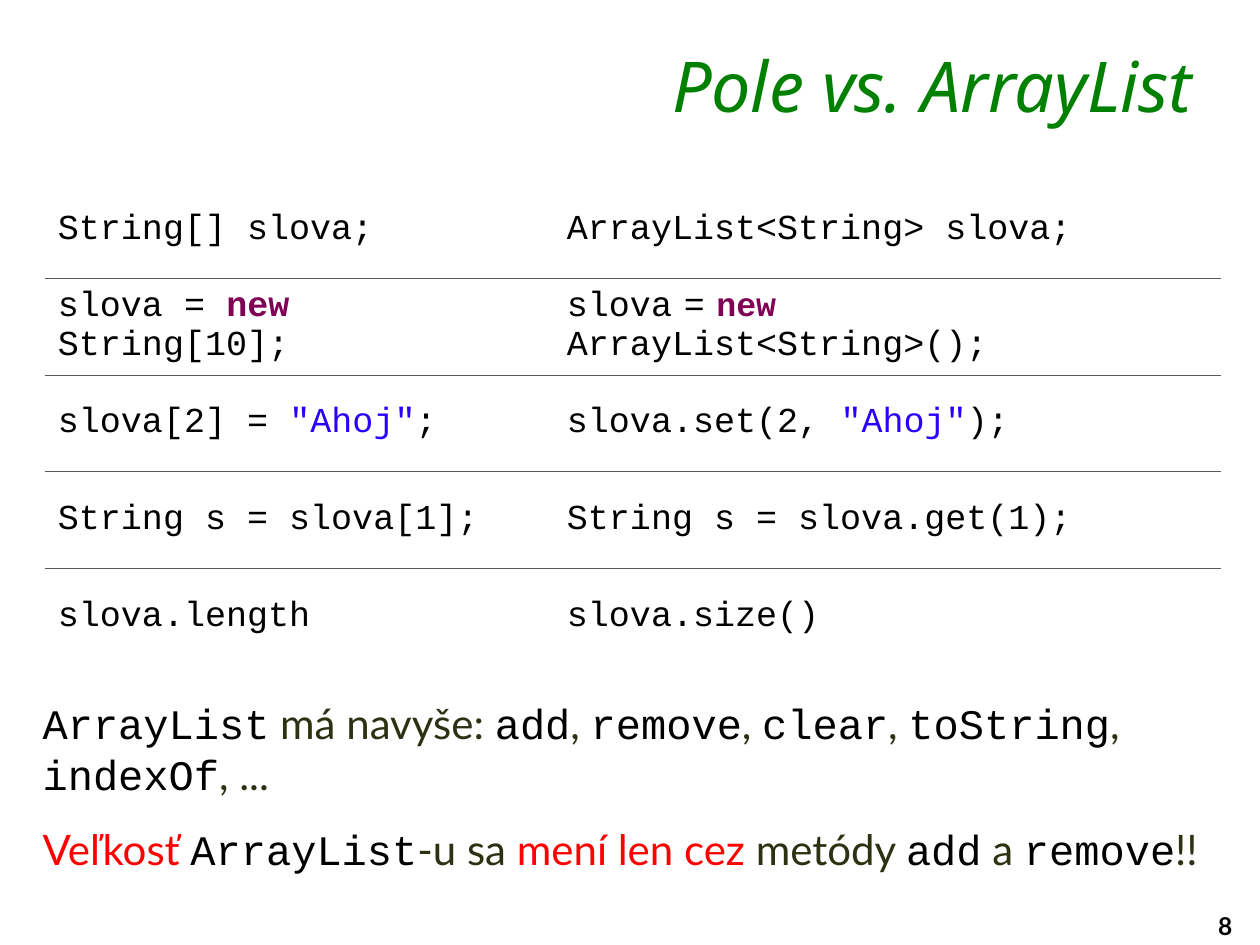
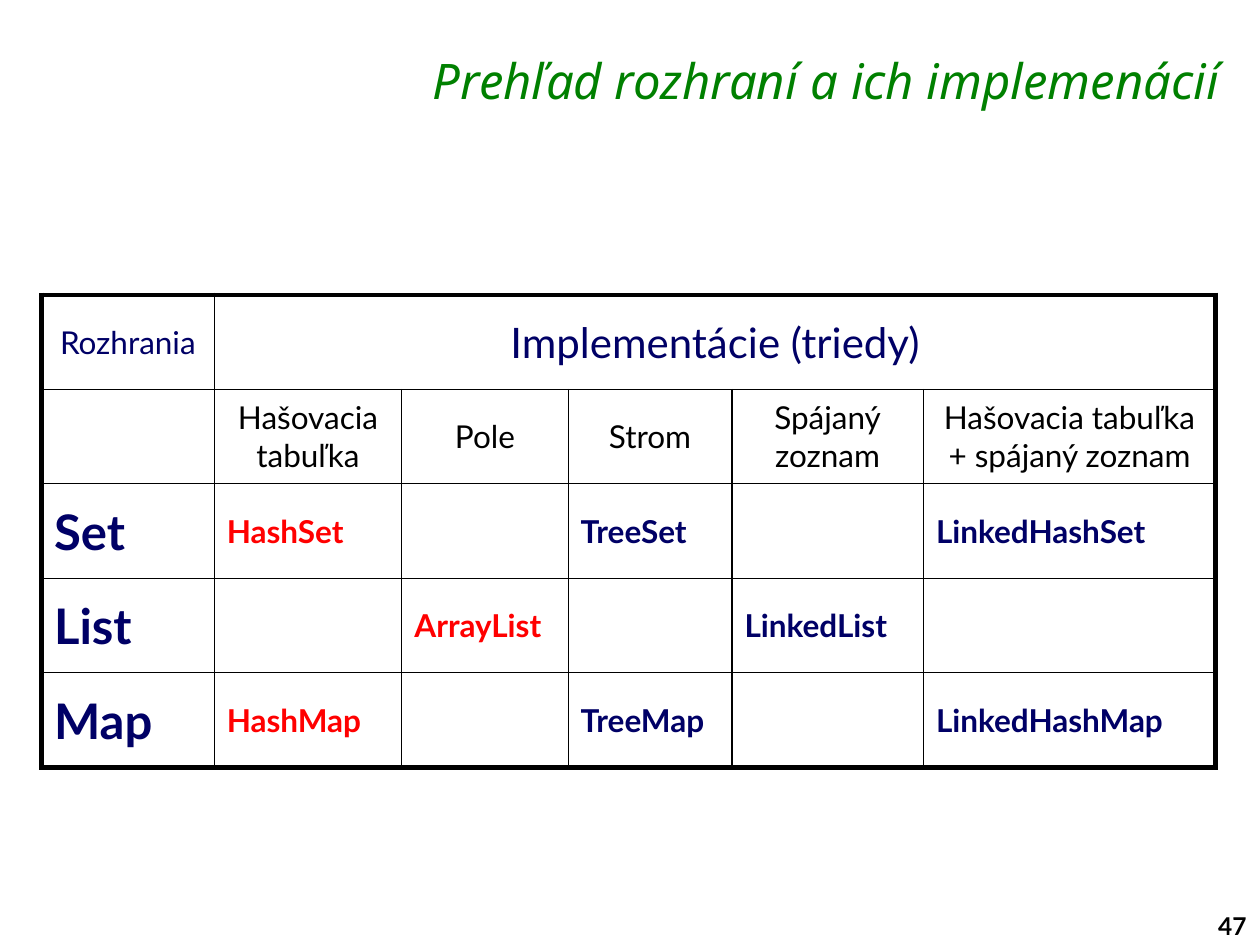
from dataclasses import dataclass, replace

from lxml.etree import SubElement
from pptx import Presentation
from pptx.dml.color import RGBColor
from pptx.enum.text import MSO_ANCHOR, MSO_AUTO_SIZE, PP_ALIGN
from pptx.oxml.ns import qn
from pptx.util import Inches, Pt

BLACK = RGBColor(0x00, 0x00, 0x00)
GREEN = RGBColor(0x00, 0x80, 0x00)
NAVY = RGBColor(0x00, 0x00, 0x66)
RED = RGBColor(0xFF, 0x00, 0x00)
OLIVE = RGBColor(0x2B, 0x32, 0x12)
KEYWORD_PURPLE = RGBColor(0x7F, 0x00, 0x55)
STRING_BLUE = RGBColor(0x2A, 0x00, 0xFF)
RULE_GREY = RGBColor(0x59, 0x59, 0x59)

SLIDE_WIDTH, SLIDE_HEIGHT = Inches(10), Inches(7.5)
COLUMN, ROW = SLIDE_WIDTH / 100, SLIDE_HEIGHT / 75  # layout grid
TITLE_ONLY_LAYOUT = 5


@dataclass(frozen=True)
class Style:
    font: str
    size: float
    color: RGBColor = BLACK
    bold: bool = False
    italic: bool = False


TITLE = Style("Noto Sans", 40, GREEN, italic=True)
NUMBER = Style("Lato", 14, bold=True)
CODE = Style("Courier New", 20)
KEYWORD = replace(CODE, color=KEYWORD_PURPLE, bold=True)
STRING = replace(CODE, color=STRING_BLUE)
THIN_SPACE = replace(CODE, size=11)
NOTE = Style("Lato", 24, OLIVE)
WARNING = replace(NOTE, color=RED)
NOTE_CODE = replace(CODE, size=24)
KIND = Style("Lato", 18)
CORNER = replace(KIND, color=NAVY)
GROUP = replace(CORNER, size=24)
INTERFACE = replace(CORNER, size=28, bold=True)
CLASS = replace(CORNER, bold=True)
COMMON_CLASS = replace(CLASS, color=RED)

CODE_PAIRS = [
    ([("String[] slova;", CODE)], [("ArrayList<String> slova;", CODE)]),
    (
        [("slova = ", CODE), ("new ", KEYWORD), ("String[10];", CODE)],
        [
            ("slova", CODE), (" ", THIN_SPACE), ("=", CODE), (" ", THIN_SPACE),
            ("new", replace(KEYWORD, size=19)), (" ", THIN_SPACE),
            ("ArrayList<String>();", CODE),
        ],
    ),
    (
        [("slova[2] = ", CODE), ('"Ahoj"', STRING), (";", CODE)],
        [("slova.set(2, ", CODE), ('"Ahoj"', STRING), (");", CODE)],
    ),
    ([("String s = slova[1];", CODE)], [("String s = slova.get(1);", CODE)]),
    ([("slova.length", CODE)], [("slova.size()", CODE)]),
]

EXTRA_METHODS = [
    ("ArrayList", NOTE_CODE), (" má navyše: ", NOTE),
    ("add", NOTE_CODE), (", ", NOTE), ("remove", NOTE_CODE), (", ", NOTE),
    ("clear", NOTE_CODE), (", ", NOTE), ("toString", NOTE_CODE), (", ", NOTE),
    ("indexOf", NOTE_CODE), (", ...", NOTE),
]
SIZE_WARNING = [
    ("Veľkosť ", WARNING), ("ArrayList", NOTE_CODE), ("-u sa ", NOTE),
    ("mení len cez ", WARNING), ("metódy ", NOTE), ("add", NOTE_CODE),
    (" a ", NOTE), ("remove", NOTE_CODE), ("!!", NOTE),
]

KINDS = [
    ["Hašovacia", "tabuľka"], ["Pole"], ["Strom"], ["Spájaný", "zoznam"],
    ["Hašovacia tabuľka", "+ spájaný zoznam"],
]
INTERFACES = {
    "Set": ["HashSet", "", "TreeSet", "", "LinkedHashSet"],
    "List": ["", "ArrayList", "", "LinkedList", ""],
    "Map": ["HashMap", "", "TreeMap", "", "LinkedHashMap"],
}
COMMON_CLASSES = {"HashSet", "ArrayList", "HashMap"}


def grid_box(left, top, width, height):
    """Turn grid columns and rows into slide lengths."""
    return (round(left * COLUMN), round(top * ROW),
            round(width * COLUMN), round(height * ROW))


def write(text_frame, lines, align=PP_ALIGN.LEFT, gap=0):
    """Write each line, a list of (text, style) runs, as a paragraph."""
    for index, runs in enumerate(lines):
        paragraph = text_frame.add_paragraph() if index else text_frame.paragraphs[0]
        paragraph.alignment = align
        if index and gap:
            paragraph.space_before = Pt(gap)
        for text, style in runs:
            run = paragraph.add_run()
            run.text = text
            font = run.font
            font.name, font.size = style.font, Pt(style.size)
            font.bold, font.italic = style.bold, style.italic
            font.color.rgb = style.color


def add_text(slide, box, lines, wrap=True, gap=0):
    text_frame = slide.shapes.add_textbox(*grid_box(*box)).text_frame
    text_frame.word_wrap = wrap
    write(text_frame, lines, gap=gap)


def add_titled_slide(presentation, title, title_size, title_box, number):
    slide = presentation.slides.add_slide(presentation.slide_layouts[TITLE_ONLY_LAYOUT])
    shape = slide.shapes.title
    shape.left, shape.top, shape.width, shape.height = grid_box(*title_box)
    text_frame = shape.text_frame
    text_frame.auto_size = MSO_AUTO_SIZE.NONE
    text_frame.vertical_anchor = MSO_ANCHOR.TOP
    text_frame.margin_top = text_frame.margin_bottom = Inches(0.03)
    write(text_frame, [[(title, replace(TITLE, size=title_size))]], PP_ALIGN.RIGHT)
    add_text(slide, (95.7, 71.8, 4.3, 3.3), [[(number, NUMBER)]], wrap=False)
    return slide


def set_borders(cell, widths, color):
    """Draw left, right, top and bottom borders; a width of 0 hides one."""
    properties = cell._tc.get_or_add_tcPr()
    for index, (side, width) in enumerate(zip("LRTB", widths)):
        line = SubElement(properties, qn(f"a:ln{side}"), w=str(Pt(width)))
        if width:
            fill = SubElement(line, qn("a:solidFill"))
            SubElement(fill, qn("a:srgbClr"), val=str(color))
        else:
            SubElement(line, qn("a:noFill"))
        properties.insert(index, line)


def add_plain_table(slide, box, column_widths, row_count, outer, inner, color):
    """Add an unfilled table; outer and inner are (vertical, horizontal) widths."""
    column_count = len(column_widths)
    table = slide.shapes.add_table(row_count, column_count, *grid_box(*box)).table
    table.first_row = table.horz_banding = False
    for column, width in zip(table.columns, column_widths):
        column.width = round(width * COLUMN)
    for r in range(row_count):
        for c in range(column_count):
            cell = table.cell(r, c)
            cell.fill.background()
            cell.vertical_anchor = MSO_ANCHOR.MIDDLE
            set_borders(cell, (
                inner[0] if c else outer[0],
                inner[0] if c < column_count - 1 else outer[0],
                inner[1] if r else outer[1],
                inner[1] if r < row_count - 1 else outer[1],
            ), color)
    return table


def add_code_comparison(slide, box):
    table = add_plain_table(slide, box, (40.4, 52.9), len(CODE_PAIRS),
                            (0, 0), (0, 0.25), RULE_GREY)
    for r, pair in enumerate(CODE_PAIRS):
        for c, runs in enumerate(pair):
            write(table.cell(r, c).text_frame, [runs])


def add_interface_overview(slide, box):
    table = add_plain_table(slide, box, (13.7, 14.9, 13.2, 13, 15.2, 23.2),
                            len(INTERFACES) + 2, (3, 3), (0.75, 0.75), BLACK)
    group = table.cell(0, 1)
    group.merge(table.cell(0, len(KINDS)))
    set_borders(group, (0.75, 3, 3, 0.75), BLACK)
    properties = group._tc.tcPr
    for replaced in properties.findall(qn("a:lnL"))[1:] + properties.findall(qn("a:lnR"))[1:] \
            + properties.findall(qn("a:lnT"))[1:] + properties.findall(qn("a:lnB"))[1:]:
        properties.remove(replaced)
    write(table.cell(0, 0).text_frame, [[("Rozhrania", CORNER)]], PP_ALIGN.CENTER)
    write(group.text_frame, [[("Implementácie (triedy)", GROUP)]], PP_ALIGN.CENTER)
    for c, lines in enumerate(KINDS, 1):
        write(table.cell(1, c).text_frame, [[(line, KIND)] for line in lines],
              PP_ALIGN.CENTER)
    for r, (interface, classes) in enumerate(INTERFACES.items(), 2):
        write(table.cell(r, 0).text_frame, [[(interface, INTERFACE)]])
        for c, name in enumerate(classes, 1):
            if name:
                style = COMMON_CLASS if name in COMMON_CLASSES else CLASS
                write(table.cell(r, c).text_frame, [[(name, style)]])


def main():
    presentation = Presentation()
    presentation.slide_width, presentation.slide_height = SLIDE_WIDTH, SLIDE_HEIGHT

    slide = add_titled_slide(presentation, "Pole vs. ArrayList", 40,
                             (20.1, 3.1, 75.5, 5.8), "8")
    add_code_comparison(slide, (3.6, 14.4, 93.3, 38.4))
    add_text(slide, (2.4, 54.9, 97.6, 15.1), [EXTRA_METHODS, SIZE_WARNING], gap=14.4)

    slide = add_titled_slide(presentation, "Prehľad rozhraní a ich implemenácií", 28,
                             (22.2, 3.7, 75.5, 5.8), "47")
    add_interface_overview(slide, (3.3, 23.4, 93.3, 37.5))

    presentation.save("out.pptx")


if __name__ == "__main__":
    main()
